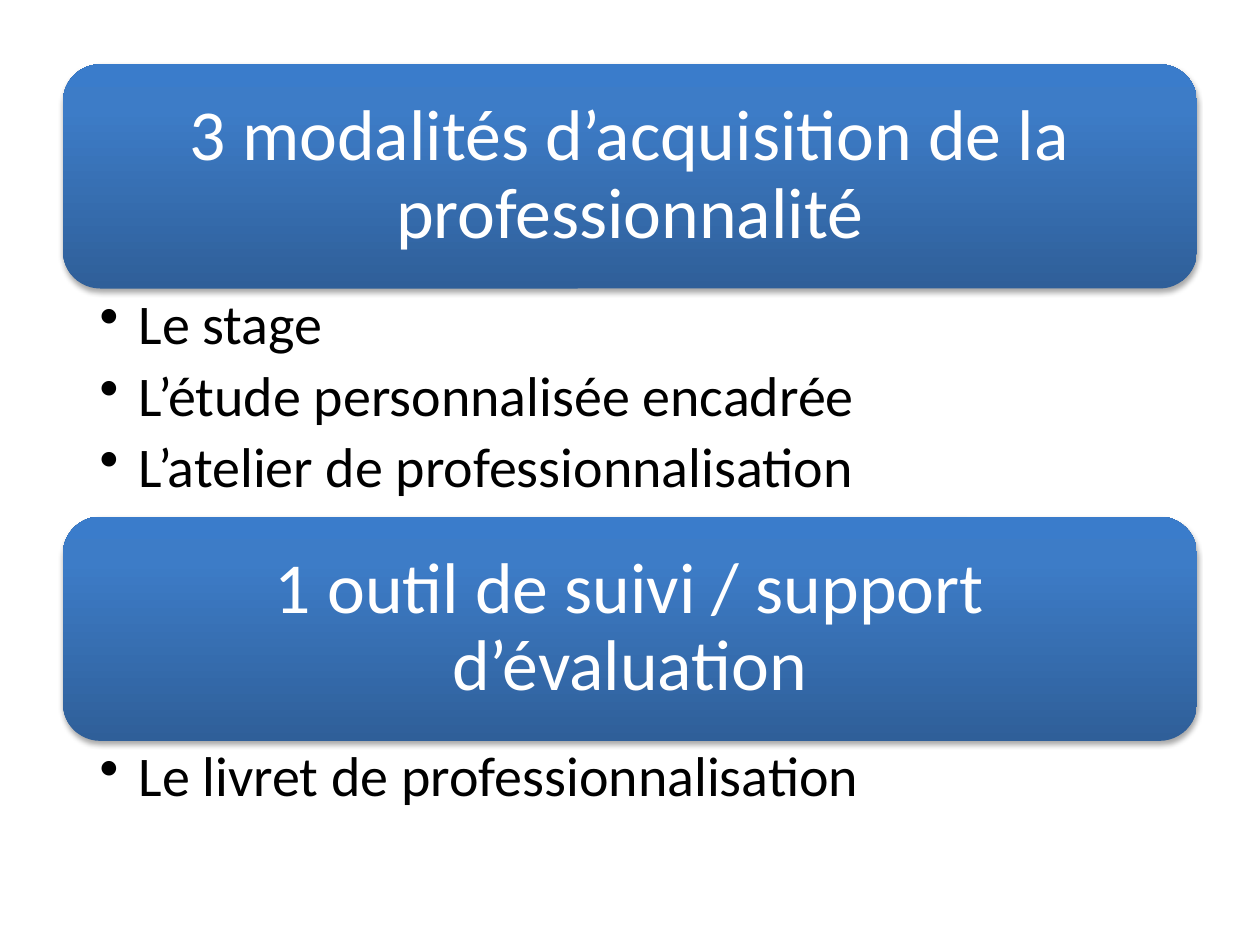
import copy
import pptx
import pptx.dml.color
import pptx.enum.shapes
import pptx.enum.text
import pptx.oxml
import pptx.oxml.ns
import pptx.util

Inches = pptx.util.Inches
Pt = pptx.util.Pt
NAMESPACE = pptx.oxml.ns.nsdecls("a")


def paint(color_format, value):
    color_format.rgb = pptx.dml.color.RGBColor.from_string(value)


def write(box, lines, size, color, align, insets, after, bullet=None):
    frame = box.text_frame
    frame.word_wrap = True
    frame.margin_left, frame.margin_top, frame.margin_right, frame.margin_bottom = map(Inches, insets)
    for index, line in enumerate(lines):
        para = frame.paragraphs[0] if index == 0 else frame.add_paragraph()
        para.alignment = align
        para.line_spacing = 0.9
        para.space_after = Pt(size * after)
        span = para.add_run()
        span.text = line
        span.font.size = Pt(size)
        span.font.name = "Calibri"
        paint(span.font.color, color)
        if bullet:
            para.level = 1
            properties = para._p.get_or_add_pPr()
            properties.set("marL", str(Inches(0.31)))
            properties.set("indent", str(Inches(-0.31)))
            properties.append(pptx.oxml.parse_xml(f'<a:buChar {NAMESPACE} char="{bullet}"/>'))


deck = pptx.Presentation()
deck.slide_width = Inches(10)
deck.slide_height = Inches(7.5)
page = deck.slides.add_slide(deck.slide_layouts[6])

left = deck.slide_width * 0.05
width = deck.slide_width * 0.9
banner_height = Inches(1.78)
top = Inches(0.51)

sections = [
    ("3 modalités d’acquisition de la professionnalité",
     ["Le stage", "L’étude personnalisée encadrée", "L’atelier de professionnalisation"], 1.81),
    ("1 outil de suivi / support d’évaluation", ["Le livret de professionnalisation"], 0.74),
]
gradient = [(0, "2F5F99"), (0.8, "3D7CC7"), (1, "3A7CCB")]

for title, items, list_height in sections:
    banner = page.shapes.add_shape(
        pptx.enum.shapes.MSO_SHAPE.ROUNDED_RECTANGLE, left, top, width, banner_height)
    banner.line.fill.background()
    banner.fill.gradient()
    banner.fill.gradient_angle = 90
    stop_list = banner._element.spPr.find(".//" + pptx.oxml.ns.qn("a:gsLst"))
    stop_list.append(copy.deepcopy(stop_list[-1]))
    for stop, (position, color) in zip(banner.fill.gradient_stops, gradient):
        stop.position = position
        paint(stop.color, color)
    banner.shadow.inherit = False
    effects = banner._element.spPr.find(pptx.oxml.ns.qn("a:effectLst"))
    effects.append(pptx.oxml.parse_xml(
        f'<a:outerShdw {NAMESPACE} blurRad="{Pt(3.1)}" dist="{Pt(1.8)}" dir="5400000" rotWithShape="0">'
        '<a:srgbClr val="000000"><a:alpha val="35000"/></a:srgbClr></a:outerShdw>'))
    banner.text_frame.vertical_anchor = pptx.enum.text.MSO_ANCHOR.MIDDLE
    write(banner, [title], size=41, color="FFFFFF", align=pptx.enum.text.PP_ALIGN.CENTER,
          insets=(0.17, 0.17, 0.17, 0.17), after=0.35)
    top += banner_height

    box = page.shapes.add_textbox(left, top, width, Inches(list_height))
    write(box, items, size=32, color="000000", align=pptx.enum.text.PP_ALIGN.LEFT,
          insets=(0.29, 0.06, 0.32, 0.06), after=0.2, bullet="•")
    top += Inches(list_height)

deck.save("out.pptx")
